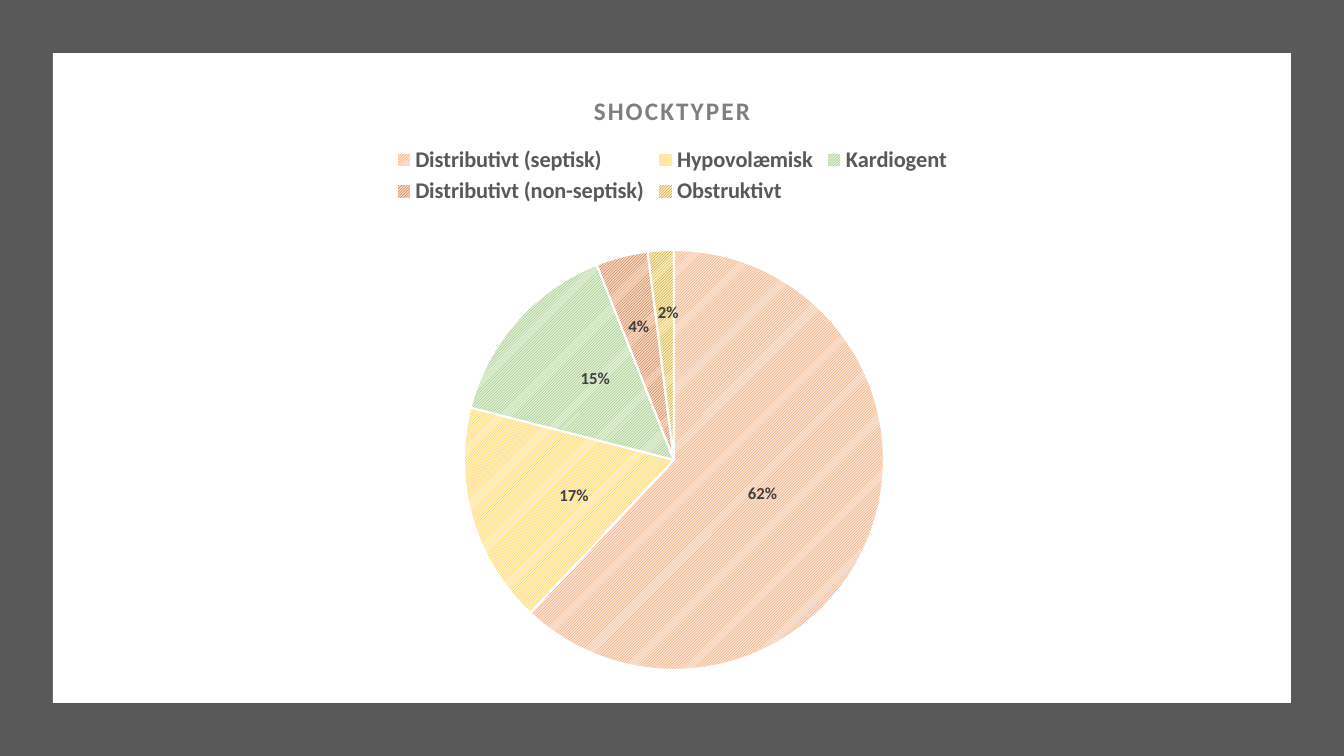
import pptx
import pptx.util
import pptx.oxml
import pptx.oxml.ns
import pptx.chart.data
import pptx.dml.color
import pptx.enum.chart
import pptx.enum.dml
import pptx.enum.shapes

FONT = "Calibri"
TITLE = "SHOCKTYPER"
# name, percent, pattern foreground, pattern background, label shift from slice centre
SHOCK_TYPES = [
    ("Distributivt (septisk)", 62, "ED7D31", "FBE5D6", (-9, -5)),
    ("Hypovolæmisk", 17, "FFC000", "FFF2CC", (1, 7)),
    ("Kardiogent", 15, "70AD47", "E2F0D9", (0, -12)),
    ("Distributivt (non-septisk)", 4, "9E480E", "FAD8C1", (-9, -31)),
    ("Obstruktivt", 2, "997300", "FFEDB8", (1, -42)),
]
SLIDE_SIZE = (1344, 756)
PANELS = [
    ((0, 0, *SLIDE_SIZE), "595959"),
    ((53, 53, 1238, 650), "FFFFFF"),
]
CHART_BOX = (71, 71, 1202, 614)
PIE_BOX = (464, 250, 420, 420)


def px(n):
    return pptx.util.Emu(round(n * 914400 / 100.8))


def rgb(color):
    return pptx.dml.color.RGBColor.from_string(color)


def set_font(font, size, color, bold=True):
    font.name = FONT
    font.size = pptx.util.Pt(size)
    font.bold = bold
    font.color.rgb = rgb(color)


def chart_xml(tag, body):
    return pptx.oxml.parse_xml(
        f"<c:{tag} {pptx.oxml.ns.nsdecls('c')}>{body}</c:{tag}>")


def manual_layout(modes, **lengths):
    """Layout element whose px lengths become fractions of the chart."""
    width, height = CHART_BOX[2:]
    parts = "".join(
        f'<c:{k} val="{v / (width if k in "xw" else height):.5f}"/>'
        for k, v in lengths.items())
    return chart_xml("layout", f"<c:manualLayout>{modes}{parts}</c:manualLayout>")


def add_panel(s, box, color):
    sp = s.shapes.add_shape(pptx.enum.shapes.MSO_SHAPE.RECTANGLE, *map(px, box))
    sp.shadow.inherit = False
    sp.fill.solid()
    sp.fill.fore_color.rgb = rgb(color)
    sp.line.fill.background()


def place_pie(chart):
    area = chart.element.xpath("c:chart/c:plotArea")[0]
    for layout in area.xpath("c:layout"):
        area.remove(layout)
    x, y, w, h = PIE_BOX
    modes = ('<c:layoutTarget val="inner"/>'
             '<c:xMode val="edge"/><c:yMode val="edge"/>')
    area.insert(0, manual_layout(
        modes, x=x - CHART_BOX[0], y=y - CHART_BOX[1], w=w, h=h))


def format_labels(chart):
    center = pptx.enum.chart.XL_LABEL_POSITION.CENTER
    series = chart.plots[0].series[0]
    labels = series.data_labels
    labels.show_value = False
    labels.show_percentage = True
    labels.number_format = "0%"
    labels.number_format_is_linked = False
    labels.position = center
    set_font(labels.font, 12, "404040")

    for i in range(len(SHOCK_TYPES)):
        label = series.points[i].data_label
        set_font(label.font, 12, "404040")
        label.position = center
    for label, (*_, (dx, dy)) in zip(chart.element.xpath(".//c:dLbl"), SHOCK_TYPES):
        number_format = chart_xml("numFmt", "")
        number_format.set("formatCode", "0%")
        number_format.set("sourceLinked", "0")
        label.insert(1, manual_layout("", x=dx, y=dy))
        label.insert(2, number_format)
        label.xpath("c:showVal")[0].set("val", "0")
        label.xpath("c:showPercent")[0].set("val", "1")


def add_pie(s):
    data = pptx.chart.data.CategoryChartData()
    data.categories = [name for name, *_ in SHOCK_TYPES]
    data.add_series("Series 1", [value for _, value, *_ in SHOCK_TYPES])
    chart = s.shapes.add_chart(
        pptx.enum.chart.XL_CHART_TYPE.PIE, *map(px, CHART_BOX), data).chart
    set_font(chart.font, 10, "000000", bold=False)

    chart.has_title = True
    p = chart.chart_title.text_frame.paragraphs[0]
    r = p.add_run()
    r.text = TITLE
    set_font(r.font, 18, "7F7F7F")
    r.font._element.set("spc", "150")  # letter spacing, 1.5 pt
    chart.chart_title.include_in_layout = False

    chart.has_legend = True
    chart.legend.position = pptx.enum.chart.XL_LEGEND_POSITION.TOP
    chart.legend.include_in_layout = False
    set_font(chart.legend.font, 16, "595959")

    plot = chart.plots[0]
    plot.vary_by_categories = True
    for i, (_, _, fore, back, _) in enumerate(SHOCK_TYPES):
        fmt = plot.series[0].points[i].format
        fmt.fill.patterned()
        fmt.fill.pattern = pptx.enum.dml.MSO_PATTERN.LIGHT_UPWARD_DIAGONAL
        fmt.fill.fore_color.rgb = rgb(fore)
        fmt.fill.back_color.rgb = rgb(back)
        fmt.line.color.rgb = rgb("FFFFFF")
        fmt.line.width = pptx.util.Pt(1.5)
    place_pie(chart)
    format_labels(chart)


def main():
    prs = pptx.Presentation()
    prs.slide_width, prs.slide_height = map(px, SLIDE_SIZE)
    s = prs.slides.add_slide(prs.slide_layouts.get_by_name("Blank"))
    for box, color in PANELS:
        add_panel(s, box, color)
    add_pie(s)
    prs.save("out.pptx")


if __name__ == "__main__":
    main()
